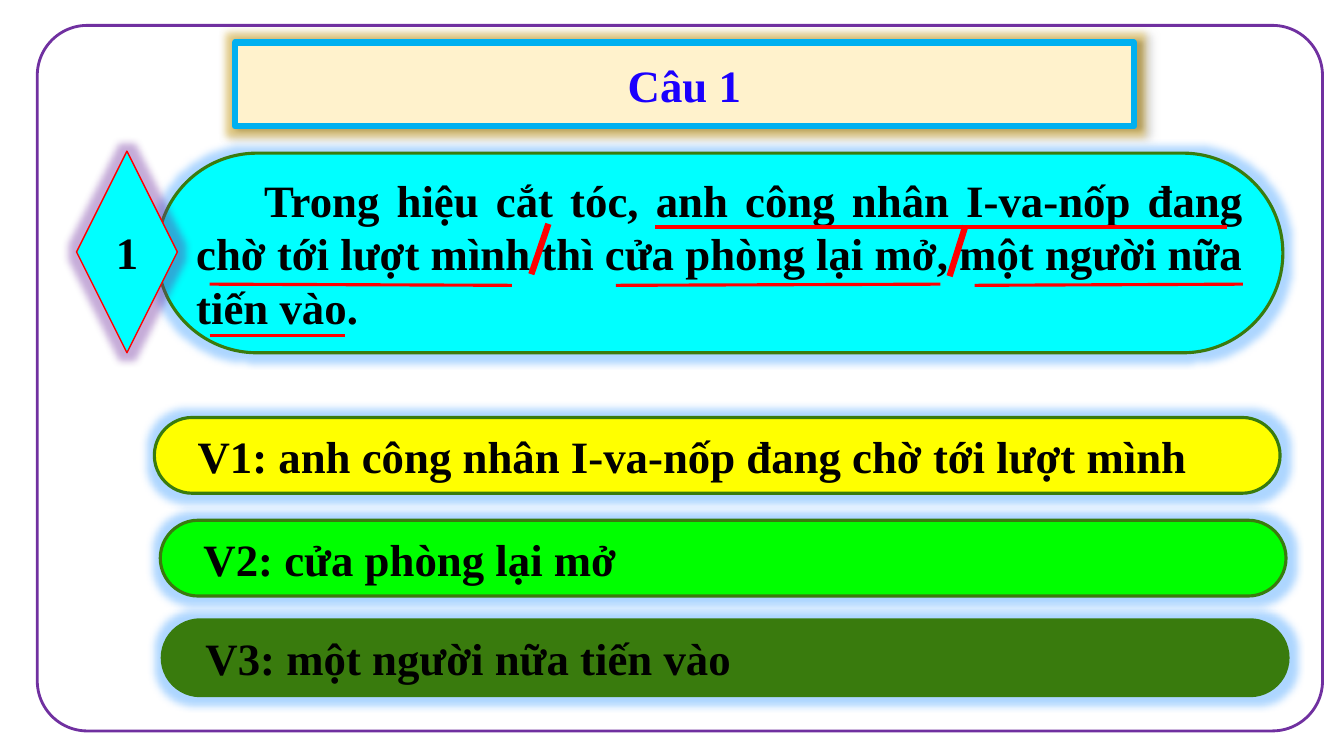
from dataclasses import dataclass
from typing import Optional

from lxml import etree
from pptx import Presentation
from pptx import util as u
from pptx.dml.color import RGBColor
from pptx.enum import shapes, text
from pptx.oxml import parse_xml
from pptx.oxml.ns import nsdecls, qn

COLOURS = {
    "cream": "FFF2CC", "sky": "00B0F0", "blue": "1B00FE", "purple": "7030A0",
    "cyan": "00FFFF", "green": "397B0D", "red": "FF0000", "black": "000000",
    "yellow": "FFFF00", "lime": "00FF00", "gold": "E0A800", "halo": "3399FF",
}
FONT = "Times New Roman"
ROUND = shapes.MSO_SHAPE.ROUNDED_RECTANGLE
DIAMOND = shapes.MSO_SHAPE.DIAMOND
CENTER = text.PP_ALIGN.CENTER
JUSTIFY = text.PP_ALIGN.JUSTIFY


@dataclass
class Panel:
    left: float
    top: float
    width: float
    height: float
    fill: Optional[str]
    line: str
    line_width: float
    glow: Optional[str] = None
    words: str = ""
    align: text.PP_ALIGN = JUSTIFY
    colour: str = "black"
    kind: shapes.MSO_SHAPE = ROUND
    rounding: float = 0.5
    inset: float = 0.25
    indent: float = 0
    shadow: bool = False


@dataclass
class Mark:
    start_x: float
    start_y: float
    end_x: float
    end_y: float
    width: float = 2.25


def rgb(name: str) -> RGBColor:
    return RGBColor.from_string(COLOURS[name])


def add_effects(box, panel: Panel) -> None:
    effects = etree.SubElement(box._element.spPr, qn("a:effectLst"))
    if panel.glow:
        effects.append(parse_xml(
            f'<a:glow {nsdecls("a")} rad="139700"><a:srgbClr val="{COLOURS[panel.glow]}">'
            '<a:alpha val="40000"/></a:srgbClr></a:glow>'))
    if panel.shadow:
        effects.append(parse_xml(
            f'<a:outerShdw {nsdecls("a")} blurRad="50800" dist="38100" dir="0">'
            f'<a:srgbClr val="{COLOURS["black"]}"><a:alpha val="40000"/></a:srgbClr>'
            '</a:outerShdw>'))


def write_words(box, panel: Panel) -> None:
    frame = box.text_frame
    frame.word_wrap = True
    frame.auto_size = text.MSO_AUTO_SIZE.NONE
    frame.vertical_anchor = text.MSO_ANCHOR.MIDDLE
    frame.margin_left = u.Cm(panel.inset)
    para = frame.paragraphs[0]
    para.alignment = panel.align
    if panel.indent:
        para._p.get_or_add_pPr().set("indent", str(u.Cm(panel.indent)))
    span = para.add_run()
    span.text = panel.words
    span.font.name = FONT
    span.font.size = u.Pt(32)
    span.font.bold = True
    span.font.color.rgb = rgb(panel.colour)


def style_panel(box, panel: Panel) -> None:
    if panel.fill:
        box.fill.solid()
        box.fill.fore_color.rgb = rgb(panel.fill)
    else:
        box.fill.background()
    box.line.color.rgb = rgb(panel.line)
    box.line.width = u.Pt(panel.line_width)
    add_effects(box, panel)
    if panel.words:
        write_words(box, panel)


def add_panel(page, panel: Panel) -> None:
    box = page.shapes.add_shape(panel.kind, u.Cm(panel.left), u.Cm(panel.top),
                                u.Cm(panel.width), u.Cm(panel.height))
    if panel.kind == ROUND:
        box.adjustments[0] = panel.rounding
    style_panel(box, panel)


def add_title(page, panel: Panel) -> None:
    box = page.shapes.title
    box.left, box.top = u.Cm(panel.left), u.Cm(panel.top)
    box.width, box.height = u.Cm(panel.width), u.Cm(panel.height)
    box._element.spPr.append(parse_xml(
        f'<a:prstGeom {nsdecls("a")} prst="roundRect"><a:avLst>'
        f'<a:gd name="adj" fmla="val {int(panel.rounding * 100000)}"/>'
        '</a:avLst></a:prstGeom>'))
    style_panel(box, panel)


def add_mark(page, mark: Mark) -> None:
    line = page.shapes.add_connector(
        shapes.MSO_CONNECTOR.STRAIGHT, u.Cm(mark.start_x), u.Cm(mark.start_y),
        u.Cm(mark.end_x), u.Cm(mark.end_y))
    line.line.color.rgb = rgb("red")
    line.line.width = u.Pt(mark.width)
    etree.SubElement(line._element.spPr, qn("a:effectLst"))


def answer(left: float, top: float, fill: str, words: str) -> Panel:
    return Panel(left, top, 28.37, 1.91, fill, "green", 2.25, "halo", words, inset=0.81)


TITLE = Panel(5.92, 1.07, 22.66, 2.11, "cream", "sky", 4.5, "gold", "Câu 1",
              CENTER, "blue", shadow=True)
QUESTION = [
    Panel(0.94, 0.64, 32.39, 17.78, None, "purple", 2, rounding=0.071),
    Panel(3.96, 3.86, 28.37, 5.03, "cyan", "green", 2.25, "halo",
          "Trong hiệu cắt tóc, anh công nhân I-va-nốp đang chờ tới lượt mình "
          "thì cửa phòng lại mở, một người nữa tiến vào.", indent=1.71),
    Panel(1.93, 3.81, 2.54, 5.08, "cyan", "red", 1, "purple", "1", CENTER, kind=DIAMOND),
]
MARKS = [
    Mark(13.82, 5.64, 13.39, 6.91, 4.5),
    Mark(16.51, 5.72, 30.91, 5.72),
    Mark(5.28, 7.16, 12.9, 7.19),
    Mark(15.52, 7.19, 23.7, 7.16),
    Mark(5.28, 8.46, 8.69, 8.46),
    Mark(24.33, 5.69, 23.93, 6.96, 4.5),
    Mark(24.56, 7.19, 31.32, 7.16),
]
ANSWERS = [
    answer(3.89, 10.52, "yellow", "V1: anh công nhân I-va-nốp đang chờ tới lượt mình"),
    answer(4.04, 13.11, "lime", "V2: cửa phòng lại mở"),
    answer(4.09, 15.62, "green", "V3: một người nữa tiến vào"),
]


def main() -> None:
    deck = Presentation()
    deck.slide_width, deck.slide_height = u.Cm(33.87), u.Cm(19.05)
    page = deck.slides.add_slide(deck.slide_layouts[5])
    add_title(page, TITLE)
    for panel in QUESTION:
        add_panel(page, panel)
    for mark in MARKS:
        add_mark(page, mark)
    for panel in ANSWERS:
        add_panel(page, panel)
    deck.save("out.pptx")


if __name__ == "__main__":
    main()
